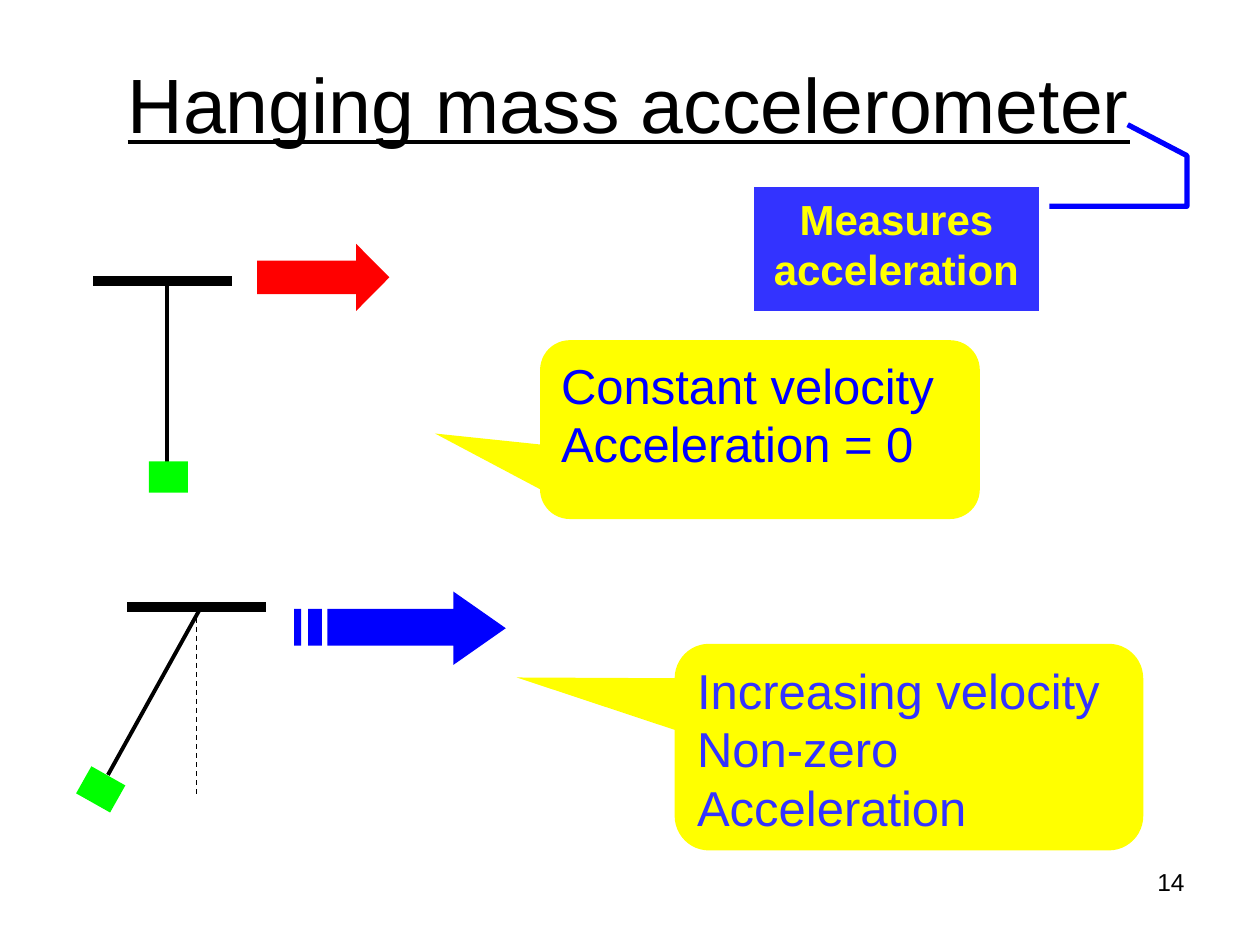
"""Build the slide on the hanging mass accelerometer."""
from lxml import etree
from pptx import Presentation
from pptx.dml.color import RGBColor
from pptx.enum.dml import MSO_LINE
from pptx.enum.shapes import MSO_CONNECTOR, MSO_SHAPE
from pptx.enum.text import MSO_ANCHOR, PP_ALIGN
from pptx.oxml.ns import qn
from pptx.util import Pt

RECT, ARROW = MSO_SHAPE.RECTANGLE, MSO_SHAPE.RIGHT_ARROW
BUBBLE = MSO_SHAPE.ROUNDED_RECTANGULAR_CALLOUT
LINE_CALLOUT = MSO_SHAPE.LINE_CALLOUT_3_NO_BORDER
STRAIGHT, DASH = MSO_CONNECTOR.STRAIGHT, MSO_LINE.DASH
TOP, MIDDLE = MSO_ANCHOR.TOP, MSO_ANCHOR.MIDDLE
LEFT, CENTER, RIGHT = PP_ALIGN.LEFT, PP_ALIGN.CENTER, PP_ALIGN.RIGHT


def paint(s, fill=None, line=None, width=0):
    """Set fill and outline and remove the shadow."""
    if line:
        s.line.color.rgb = RGBColor.from_string(line)
        s.line.width = Pt(width)
    else:
        s.line.fill.background()
    if fill:
        s.fill.solid()
        s.fill.fore_color.rgb = RGBColor.from_string(fill)
        s.shadow.inherit = False
    else:
        etree.SubElement(s._element.spPr, qn("a:effectLst"))


def write(s, text, size, color, align, anchor=TOP, bold=False):
    """Set text and format every run."""
    tf = s.text_frame
    tf.text = text
    tf.word_wrap = True
    tf.vertical_anchor = anchor
    for p in tf.paragraphs:
        p.alignment = align
        for r in p.runs:
            r.font.name = "Arial"
            r.font.size = Pt(size)
            r.font.bold = bold
            r.font.color.rgb = RGBColor.from_string(color)


prs = Presentation()
prs.slide_width, prs.slide_height = Pt(720), Pt(540)
slide = prs.slides.add_slide(prs.slide_layouts[5])

title = slide.shapes.title
title.left, title.top, title.width, title.height = Pt(35.3), Pt(17.3), Pt(648), Pt(82.8)
write(title, "Hanging mass accelerometer", 44, "000000", CENTER, MIDDLE)
title.text_frame.paragraphs[0].runs[0].font.underline = True

steady = slide.shapes.add_group_shape().shapes
speeding = slide.shapes.add_group_shape().shapes

for shapes, x1, y1, x2, y2, width in [
    (steady, 53.3, 160.7, 132.7, 160.7, 6),
    (steady, 95.2, 160.7, 95.2, 265.7, 2.25),
    (speeding, 72.7, 346.9, 152.1, 346.9, 6),
    (speeding, 114.9, 346.9, 61.7, 442.8, 2.25),
    (speeding, 112.3, 347.8, 112.3, 454.3, 0.75),
]:
    s = shapes.add_connector(STRAIGHT, Pt(x1), Pt(y1), Pt(x2), Pt(y2))
    paint(s, line="000000", width=width)
s.line.dash_style = DASH

for shapes, x, y, angle in [(steady, 85, 263.7, 0), (speeding, 46.4, 442.2, 29.4)]:
    s = shapes.add_shape(RECT, Pt(x), Pt(y), Pt(22.3), Pt(17.8))
    s.rotation = angle
    paint(s, "00FF00")

s = steady.add_shape(ARROW, Pt(146.9), Pt(139.3), Pt(75.6), Pt(38.4))
s.adjustments[1] = 0.495
paint(s, "FF0000")

top, bottom = 348.1, 369.1
head = [(258.9, 337.5), (258.9, top), (187.2, top), (187.2, bottom),
        (258.9, bottom), (258.9, 379.6), (289.1, 358.6)]
stripes = [[(x1, top), (x1, bottom), (x2, bottom), (x2, top)]
           for x1, x2 in [(176, 183.5), (168.5, 172.2)]]
builder = speeding.build_freeform(*head[0], scale=Pt(1))
builder.add_line_segments(head[1:])
for stripe in stripes:
    builder.move_to(*stripe[0])
    builder.add_line_segments(stripe[1:])
paint(builder.convert_to_shape(), "0000FF")

for x, y, w, h, tail, color, text in [
    (308.6, 194.4, 251.3, 102.2, (-0.739, 0.022), "0000FF",
     "Constant velocity\nAcceleration = 0"),
    (385.5, 367.9, 267.8, 118.1, (-0.837, -0.337), "3333FF",
     "Increasing velocity\nNon-zero Acceleration"),
]:
    s = slide.shapes.add_shape(BUBBLE, Pt(x), Pt(y), Pt(w), Pt(h))
    s.adjustments[0], s.adjustments[1] = tail
    paint(s, "FFFF00")
    write(s, text, 28, color, LEFT)

s = slide.shapes.add_shape(LINE_CALLOUT, Pt(430.8), Pt(107), Pt(162.8), Pt(70.8))
for i, value in enumerate([0.154, 1.037, 0.154, 1.52, -0.255, 1.52, -0.505, 1.312]):
    s.adjustments[i] = value
paint(s, "3333FF", "0000FF", 3)
write(s, "Measures\nacceleration", 24, "FFFF00", CENTER, bold=True)

s = slide.shapes.add_textbox(Pt(516), Pt(491.8), Pt(168), Pt(37.5))
write(s, "14", 14, "000000", RIGHT)

prs.save("out.pptx")
